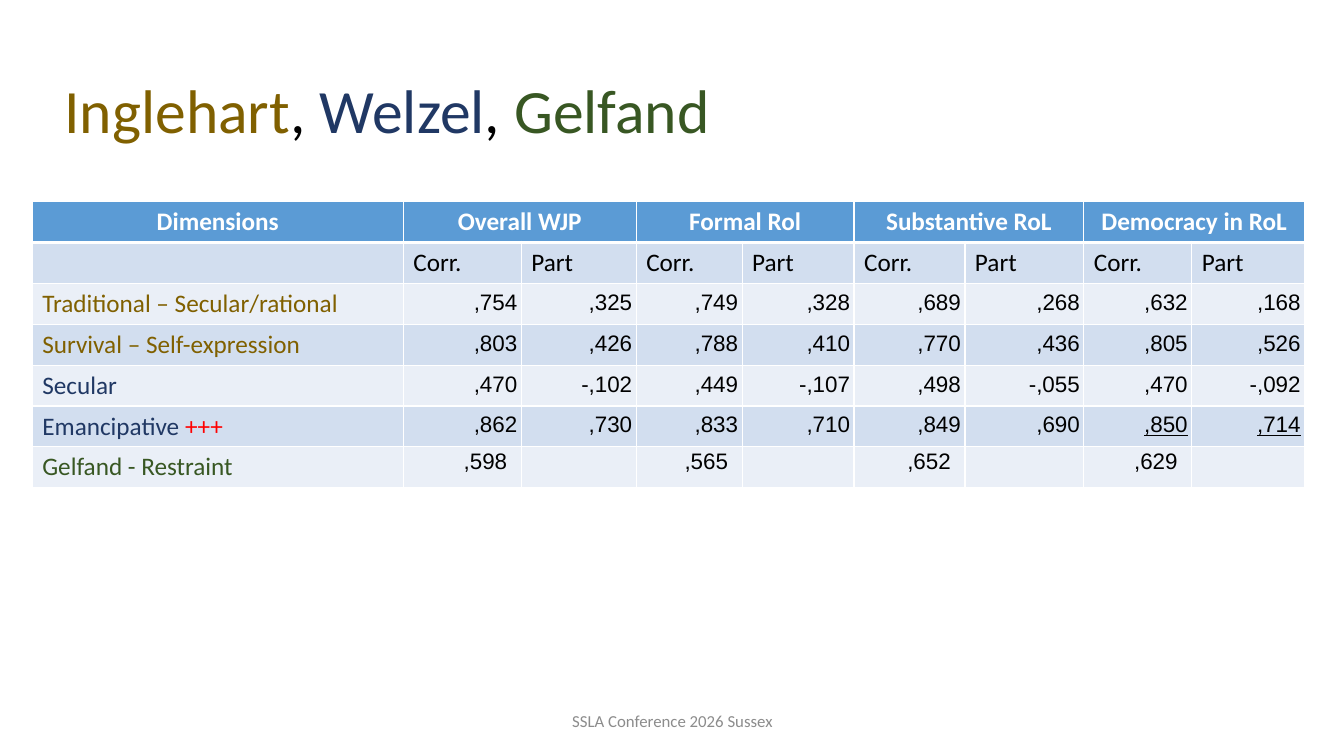
"""Build a slide with a table of culture dimensions against rule of law scores."""
import dataclasses
import typing

import lxml.etree
import pptx
import pptx.dml.color
import pptx.enum.text
import pptx.oxml.ns
import pptx.util

WIDE, HIGH = pptx.util.Inches(13.33), pptx.util.Inches(7.5)
ALIGN = pptx.enum.text.PP_ALIGN
ANCHOR = pptx.enum.text.MSO_ANCHOR
GOLD, NAVY, GREEN = "806000", "203864", "385723"
BLACK, WHITE, RED, GRAY = "000000", "FFFFFF", "FF0000", "8C8C8C"
BLUE, BANDS = "5B9BD5", ("EAEFF7", "D2DEEF")
COLS = (27.61, 8.78, 8.55, 7.88, 8.33, 8.25, 8.85, 8.03, 8.4)
ROW = 5.41
HEADS = ("Dimensions", "Overall WJP", "Formal Rol", "Substantive RoL", "Democracy in RoL")


@dataclasses.dataclass
class Run:
    text: str
    tint: str = BLACK


@dataclasses.dataclass
class Box:
    left: float
    top: float
    width: float
    height: float


@dataclasses.dataclass
class Line:
    name: list[Run]
    score: tuple[str, ...]
    under: int = 9


LINES = (
    Line([Run("Traditional – Secular/rational", GOLD)],
         (",754", ",325", ",749", ",328", ",689", ",268", ",632", ",168")),
    Line([Run("Survival – Self-expression", GOLD)],
         (",803", ",426", ",788", ",410", ",770", ",436", ",805", ",526")),
    Line([Run("Secular", NAVY)],
         (",470", "-,102", ",449", "-,107", ",498", "-,055", ",470", "-,092")),
    Line([Run("Emancipative ", NAVY), Run("+++", RED)],
         (",862", ",730", ",833", ",710", ",849", ",690", ",850", ",714"), under=7),
    Line([Run("Gelfand - Restraint", GREEN)],
         (",598", "", ",565", "", ",652", "", ",629", "")),
)


def paint(tint: str) -> pptx.dml.color.RGBColor:
    """Turn a hex string into a colour."""
    return pptx.dml.color.RGBColor.from_string(tint)


def span(box: Box) -> dict[str, int]:
    """Turn shares of the slide, in percent, into lengths."""
    return {"left": int(WIDE * box.left / 100), "top": int(HIGH * box.top / 100),
            "width": int(WIDE * box.width / 100), "height": int(HIGH * box.height / 100)}


def apply(item: typing.Any, form: dict[str, typing.Any]) -> None:
    """Set each format value on the item."""
    for key, value in form.items():
        setattr(item, key, value)


def write(frame: typing.Any, runs: list[Run], size: int = 18, face: str = "Calibri",
          align: typing.Any = ALIGN.LEFT, **form: typing.Any) -> typing.Any:
    """Write runs into the first paragraph and return it."""
    para = frame.paragraphs[0]
    para.alignment = align
    for run in runs:
        part = para.add_run()
        part.text = run.text
        apply(part.font, {"size": pptx.util.Pt(size), "name": face, "bold": False, **form})
        part.font.color.rgb = paint(run.tint)
    return para


def dress(cell: typing.Any, tint: str, row: int) -> None:
    """Fill a cell and rule its edges in white."""
    cell.fill.solid()
    cell.fill.fore_color.rgb = paint(tint)
    props = cell._tc.get_or_add_tcPr()
    for spot, side in enumerate("LRTB"):
        thick = 3 if (row, side) in ((0, "B"), (1, "T")) else 1
        edge = lxml.etree.Element(pptx.oxml.ns.qn("a:ln" + side), w=str(pptx.util.Pt(thick)))
        fill = lxml.etree.SubElement(edge, pptx.oxml.ns.qn("a:solidFill"))
        lxml.etree.SubElement(fill, pptx.oxml.ns.qn("a:srgbClr"), val=WHITE)
        props.insert(spot, edge)


def mark(cell: typing.Any, text: str, first: float, under: bool, tight: bool) -> None:
    """Write one score, set right."""
    if tight:
        apply(cell, {"vertical_anchor": ANCHOR.MIDDLE, "margin_left": 0, "margin_right": 0,
                     "margin_top": 0, "margin_bottom": 0})
    para = write(cell.text_frame, [Run(text)], 16, "Arial", ALIGN.RIGHT, underline=under)
    apply(para, {"line_spacing": pptx.util.Pt(16), "space_after": pptx.util.Pt(8)})
    props = para._p.get_or_add_pPr()
    for key, inch in {"marL": 0.04, "marR": 0.04, "indent": first}.items():
        props.set(key, str(pptx.util.Inches(inch)))


def chart(slide: typing.Any, box: Box) -> None:
    """Draw the table of scores."""
    grid = slide.shapes.add_table(len(LINES) + 2, len(COLS), **span(box)).table
    apply(grid, {"first_row": False, "horz_banding": False})
    for col, share in zip(grid.columns, COLS):
        col.width = int(WIDE * share / 100)
    for row, band in enumerate(grid.rows):
        band.height = int(HIGH * ROW / 100)
        for cell in band.cells:
            dress(cell, BANDS[row % 2] if row else BLUE, row)
    for spot, head in enumerate(HEADS):
        col = max(0, 2 * spot - 1)
        cell = grid.cell(0, col)
        if spot:
            cell.merge(grid.cell(0, col + 1))
        write(cell.text_frame, [Run(head, WHITE)], align=ALIGN.CENTER, bold=True)
    for col in range(1, len(COLS)):
        write(grid.cell(1, col).text_frame, [Run("Corr." if col % 2 else "Part")])
    for row, line in enumerate(LINES, 2):
        write(grid.cell(row, 0).text_frame, line.name)
        tight = all(line.score)
        for col, text in enumerate(line.score, 1):
            if text:
                first = 0.49 if tight else 0.25 if col == 3 else 0.35
                mark(grid.cell(row, col), text, first, col >= line.under, tight)


def main() -> None:
    """Build and save the slide."""
    deck = pptx.Presentation()
    apply(deck, {"slide_width": WIDE, "slide_height": HIGH})
    slide = deck.slides.add_slide(deck.slide_layouts[5])
    form = {"word_wrap": True, "vertical_anchor": ANCHOR.MIDDLE,
            "auto_size": pptx.enum.text.MSO_AUTO_SIZE.NONE}
    title = slide.shapes.title
    apply(title, span(Box(4.05, 5.33, 92.5, 19.33)))
    apply(title.text_frame, form)
    names = [Run("Inglehart", GOLD), Run(", "), Run("Welzel", NAVY), Run(", "),
             Run("Gelfand", GREEN)]
    write(title.text_frame, names, 44).line_spacing = 0.9
    foot = slide.shapes.add_textbox(**span(Box(33.16, 92.67, 33.76, 5.33)))
    apply(foot.text_frame, form)
    write(foot.text_frame, [Run("SSLA Conference 2026 Sussex", GRAY)], 12, align=ALIGN.CENTER)
    chart(slide, Box(2.4, 26.67, sum(COLS), ROW * (len(LINES) + 2)))
    deck.save("out.pptx")


if __name__ == "__main__":
    main()
